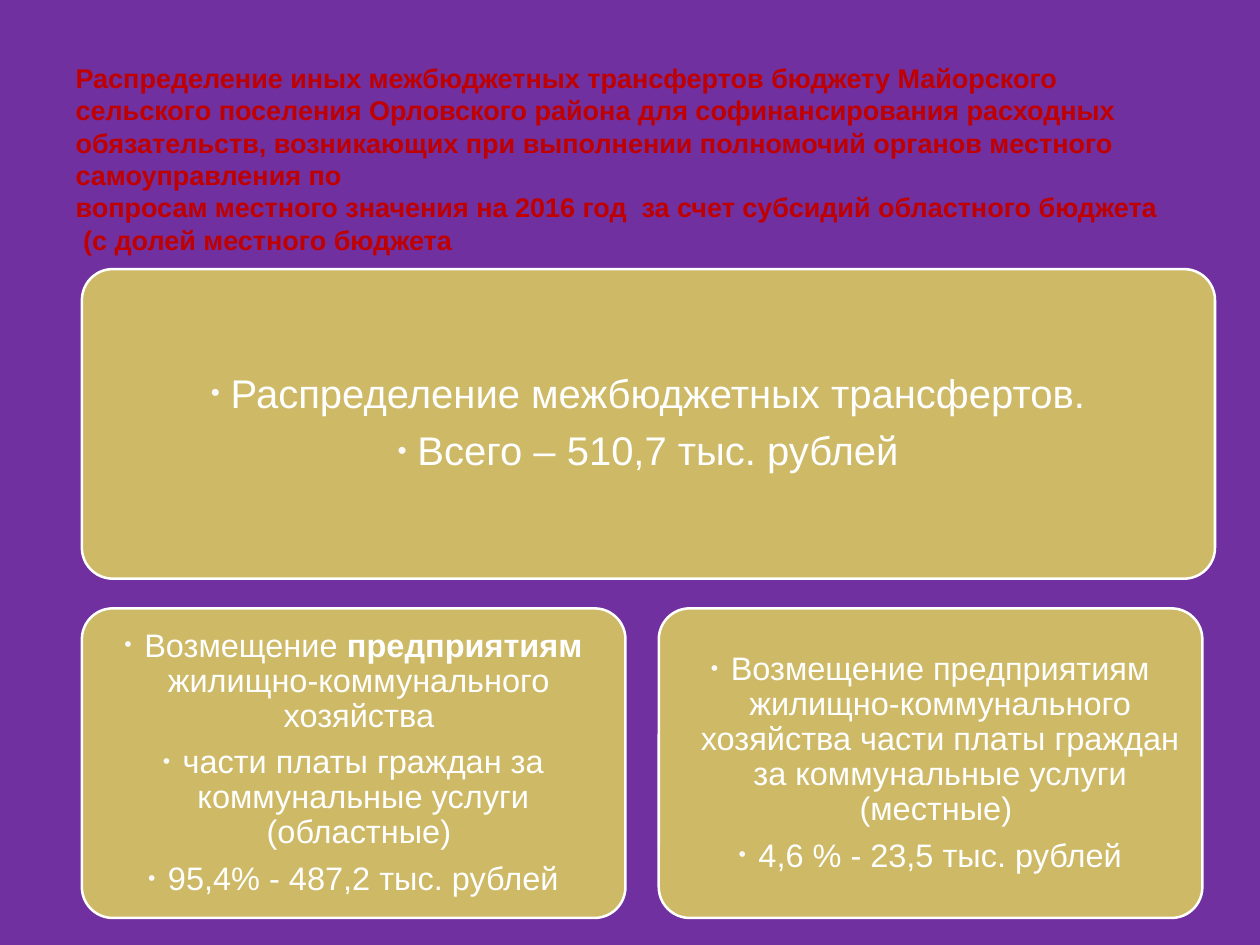
"""Build a slide on the transfers to a rural settlement's budget."""
from lxml.etree import SubElement
from pptx import Presentation
from pptx.dml.color import RGBColor
from pptx.enum.shapes import MSO_SHAPE as Shape
from pptx.enum.text import MSO_ANCHOR as Anchor, PP_ALIGN as Align
from pptx.oxml.ns import qn
from pptx.util import Inches, Pt

COLORS = {
    "background": "7030A0",
    "title": "C00000",
    "card": "CEB966",
    "text": "FFFFFF",
    "bullet": "F9F9F9",
}
WIDTH, HEIGHT = Inches(14), Inches(10.5)
LEFT, TOP = Inches(0.91), Inches(2.99)
CARD_WIDTH, CARD_HEIGHT = Inches(6.04), Inches(3.44)
COLUMN, ROW = Inches(6.41), Inches(3.77)
TITLE = (
    "Распределение иных межбюджетных трансфертов бюджету Майорского "
    "сельского поселения Орловского района для софинансирования расходных "
    "обязательств, возникающих при выполнении полномочий органов местного "
    "самоуправления по \v"
    "вопросам местного значения на 2016 год  за счет субсидий областного бюджета\v"
    " (с долей местного бюджета"
)
CARDS = [
    (0, 0, Inches(12.59), 32, [
        ["Распределение межбюджетных трансфертов."],
        ["Всего – 510,7 тыс. рублей"],
    ]),
    (0, 1, CARD_WIDTH, 26, [
        ["Возмещение ", "предприятиям", " жилищно-коммунального  хозяйства "],
        ["части платы граждан за коммунальные услуги (областные) "],
        ["95,4% - 487,2 тыс. рублей"],
    ]),
    (1, 1, CARD_WIDTH, 26, [
        ["Возмещение предприятиям жилищно-коммунального хозяйства части платы "
         "граждан за коммунальные услуги (местные) "],
        ["4,6 % - 23,5 тыс. рублей"],
    ]),
]


def color(name):
    return RGBColor.from_string(COLORS[name])


def write(paragraph, parts, size, ink, bold=False, bullet=False):
    paragraph.font.size = Pt(size)
    paragraph.font.name = "Arial"
    paragraph.font.bold = bold
    paragraph.font.color.rgb = color(ink)
    for index, part in enumerate(parts):
        run = paragraph.add_run()
        run.text = part
        run.font.size = Pt(size)
        run.font.name = "Arial"
        run.font.bold = bold or index == 1
        run.font.color.rgb = color(ink)
    if bullet:
        paragraph.alignment = Align.CENTER
        paragraph.line_spacing = 0.9
        paragraph.space_after = Pt(0.35 * size)
        properties = paragraph._p.get_or_add_pPr()
        properties.set("marL", str(Inches(0.22)))
        properties.set("indent", str(-Inches(0.22)))
        default_run = properties.find(qn("a:defRPr"))
        bullet_color = SubElement(properties, qn("a:buClr"))
        SubElement(bullet_color, qn("a:srgbClr"), val=COLORS["bullet"])
        SubElement(properties, qn("a:buSzPct"), val="65000")
        SubElement(properties, qn("a:buFont"), typeface="Arial")
        SubElement(properties, qn("a:buChar"), char="•")
        properties.append(default_run)


presentation = Presentation()
presentation.slide_width, presentation.slide_height = WIDTH, HEIGHT
slide = presentation.slides.add_slide(presentation.slide_layouts[6])
slide.background.fill.solid()
slide.background.fill.fore_color.rgb = color("background")

title = slide.shapes.add_textbox(
    int(WIDTH * 0.05), int(HEIGHT * 0.04), int(WIDTH * 0.9), Inches(2.49))
frame = title.text_frame
frame.word_wrap = True
frame.vertical_anchor = Anchor.BOTTOM
frame.margin_left = frame.margin_right = Inches(0.14)
frame.margin_top = frame.margin_bottom = Inches(0.07)
for index, line in enumerate(TITLE.split("\v")):
    if index:
        frame.paragraphs[0].add_line_break()
    write(frame.paragraphs[0], [line], 21.6, "title", bold=True)

for column, row, width, size, paragraphs in CARDS:
    card = slide.shapes.add_shape(
        Shape.ROUNDED_RECTANGLE,
        LEFT + column * COLUMN, TOP + row * ROW, width, CARD_HEIGHT)
    card.adjustments[0] = 0.1
    card.shadow.inherit = False
    card.fill.solid()
    card.fill.fore_color.rgb = color("card")
    card.line.color.rgb = color("text")
    card.line.width = Pt(2)
    frame = card.text_frame
    frame.word_wrap = True
    frame.vertical_anchor = Anchor.MIDDLE
    frame.margin_left = frame.margin_right = Inches(0.02)
    frame.margin_top = frame.margin_bottom = Inches(0.02)
    for index, parts in enumerate(paragraphs):
        paragraph = frame.add_paragraph() if index else frame.paragraphs[0]
        write(paragraph, parts, size, "text", bullet=True)

presentation.save("out.pptx")
